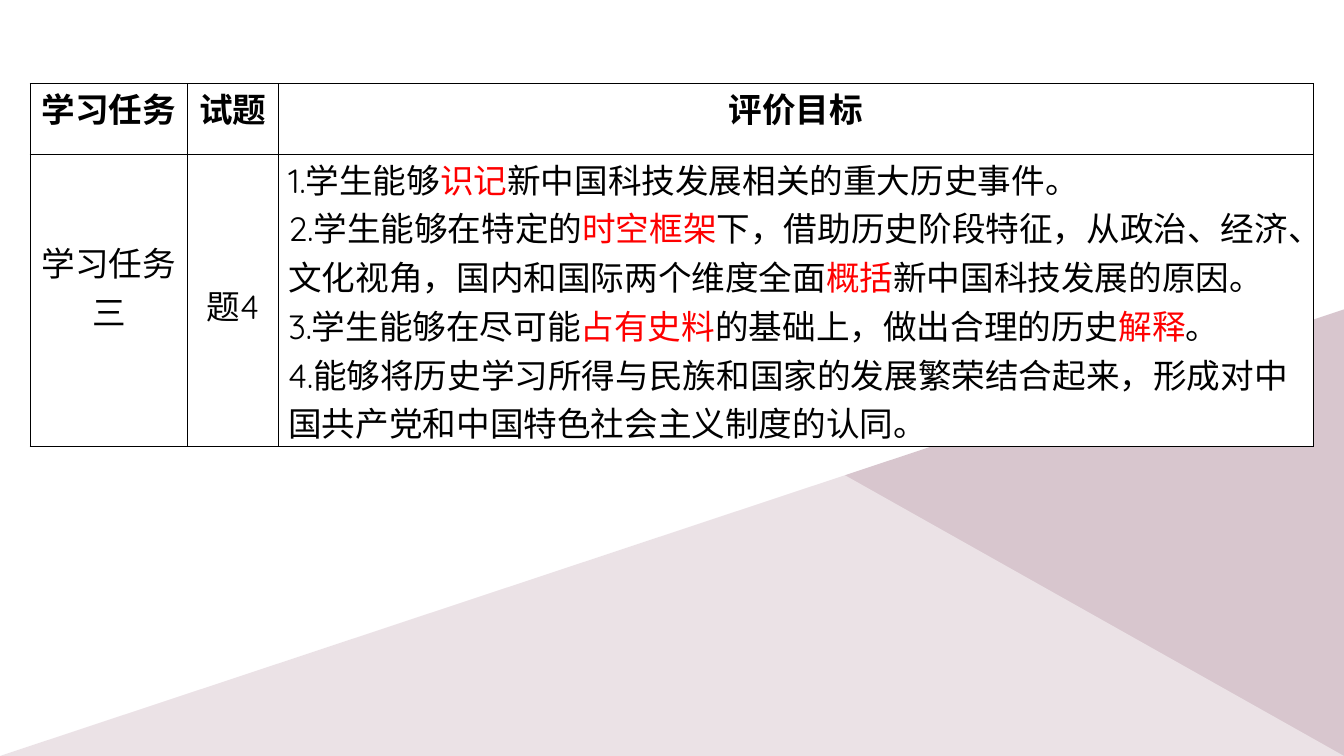
"""Builds the slide with the assessment goals of learning task three."""
from lxml import etree
from pptx import Presentation, util as u
from pptx.dml.color import RGBColor
from pptx.enum import shapes, text
from pptx.oxml import ns

COLORS = {"mauve": "7E4460", "white": "FFFFFF", "black": "000000", "red": "FE0000"}


def add_wedge(top, height, apex, color, opacity):
    wedge = slide.shapes.add_shape(
        shapes.MSO_SHAPE.ISOSCELES_TRIANGLE,
        u.Inches(0), u.Inches(top), u.Inches(13.33), u.Inches(height))
    wedge.adjustments[0] = apex
    wedge.shadow.inherit = False
    wedge.line.fill.background()
    wedge.fill.solid()
    wedge.fill.fore_color.rgb = RGBColor.from_string(COLORS[color])
    rgb = wedge.fill._xPr.find(".//" + ns.qn("a:srgbClr"))
    etree.SubElement(rgb, ns.qn("a:alpha"), val=str(opacity * 1000))


def add_borders(cell):
    properties = cell._tc.get_or_add_tcPr()
    for position, side in enumerate(("lnL", "lnR", "lnT", "lnB")):
        border = etree.Element(ns.qn("a:" + side), w=str(u.Pt(1)))
        fill = etree.SubElement(border, ns.qn("a:solidFill"))
        etree.SubElement(fill, ns.qn("a:srgbClr"), val=COLORS["black"])
        properties.insert(position, border)


prs = Presentation()
prs.slide_width, prs.slide_height = u.Inches(13.33), u.Inches(7.5)
slide = prs.slides.add_slide(prs.slide_layouts[6])

add_wedge(3.07, 4.43, 1, "mauve", 30)
add_wedge(0, 7.5, 0, "white", 50)

# Text between bars is highlighted in red.
goals = [
    "1.学生能够|识记|新中国科技发展相关的重大历史事件。",
    "2.学生能够在特定的|时空框架|下，借助历史阶段特征，从政治、经济、文化视角，"
    "国内和国际两个维度全面|概括|新中国科技发展的原因。",
    "3.学生能够在尽可能|占有史料|的基础上，做出合理的历史|解释|。",
    "4.能够将历史学习所得与民族和国家的发展繁荣结合起来，"
    "形成对中国共产党和中国特色社会主义制度的认同。",
]
rows = [
    [["学习任务"], ["试题"], ["评价目标"]],
    [["学习任务三"], ["题4"], goals],
]
column_widths = [1.56, 0.9, 10.27]
row_heights = [0.7, 2.9]
top_margins = [[0, 0, 0], [0.83, 1.25, 0]]

assessment = slide.shapes.add_table(
    2, 3, u.Inches(0.3), u.Inches(0.83),
    u.Inches(sum(column_widths)), u.Inches(sum(row_heights))).table
assessment.first_row = assessment.horz_banding = False
for column, width in zip(assessment.columns, column_widths):
    column.width = u.Inches(width)
for row, height in zip(assessment.rows, row_heights):
    row.height = u.Inches(height)

for r, entries in enumerate(rows):
    for c, paragraphs in enumerate(entries):
        cell = assessment.cell(r, c)
        cell.fill.solid()
        cell.fill.fore_color.rgb = RGBColor.from_string(COLORS["white"])
        cell.margin_top = u.Inches(top_margins[r][c])
        cell.margin_bottom = 0
        add_borders(cell)
        for p, wording in enumerate(paragraphs):
            frame = cell.text_frame
            paragraph = frame.paragraphs[0] if p == 0 else frame.add_paragraph()
            centred = paragraphs is not goals
            paragraph.alignment = text.PP_ALIGN.CENTER if centred else text.PP_ALIGN.LEFT
            for part, phrase in enumerate(wording.split("|")):
                run = paragraph.add_run()
                run.text = phrase
                formats = {"name": "Quicksand", "size": u.Pt(24), "bold": r == 0}
                for attribute, value in formats.items():
                    setattr(run.font, attribute, value)
                color = COLORS["red" if part % 2 else "black"]
                run.font.color.rgb = RGBColor.from_string(color)

prs.save("out.pptx")
